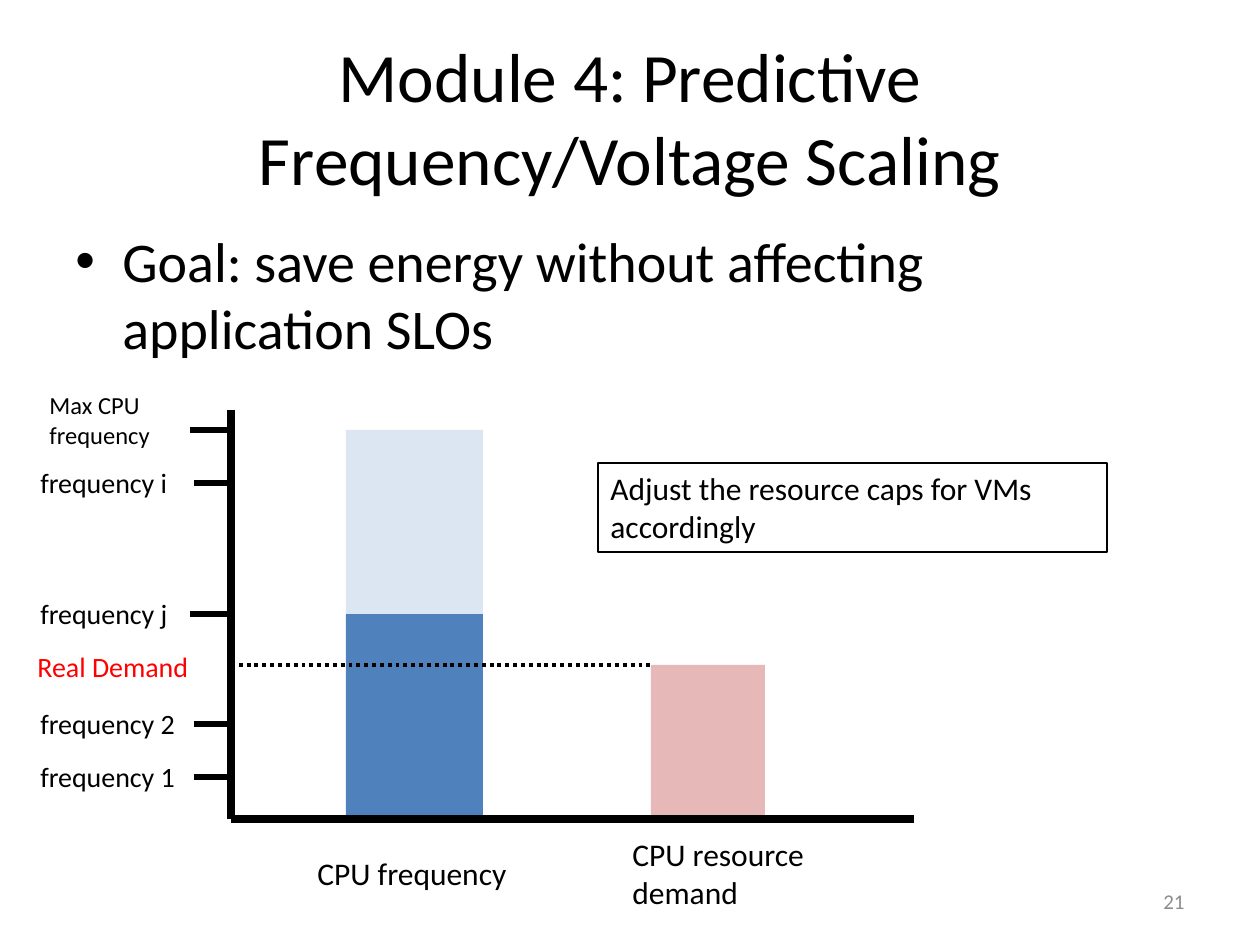
import pptx
import pptx.dml.color
import pptx.enum.dml
import pptx.enum.shapes
import pptx.enum.text
import pptx.oxml.ns
import pptx.util
from lxml import etree

PX = pptx.util.Inches(1) / 126
ALIGN = pptx.enum.text.PP_ALIGN
ANCHOR = pptx.enum.text.MSO_ANCHOR
BLACK = "000000"
PALE_BLUE = "DCE6F2"


def emu(px):
    return round(px * PX)


def color(hex_string):
    return pptx.dml.color.RGBColor.from_string(hex_string)


class SlideBuilder:
    font = "Calibri"

    def __init__(self, slide):
        self.slide = slide

    def text(self, text, left, top, width, height, size, ink=BLACK,
             align=ALIGN.LEFT, anchor=ANCHOR.TOP, border=None, bullet_indent=None):
        shape = self.slide.shapes.add_textbox(*map(emu, (left, top, width, height)))
        if border:
            shape.line.color.rgb = color(border)
            shape.line.width = pptx.util.Pt(0.75)
        frame = shape.text_frame
        frame.word_wrap = True
        frame.vertical_anchor = anchor
        frame.text = text
        paragraph = frame.paragraphs[0]
        paragraph.alignment = align
        if bullet_indent:
            properties = paragraph._p.get_or_add_pPr()
            properties.set("marL", str(emu(bullet_indent)))
            properties.set("indent", str(-emu(bullet_indent)))
            typeface = etree.SubElement(properties, pptx.oxml.ns.qn("a:buFont"))
            typeface.set("typeface", "Arial")
            bullet = etree.SubElement(properties, pptx.oxml.ns.qn("a:buChar"))
            bullet.set("char", "•")
        for run in paragraph.runs:
            run.font.name = self.font
            run.font.size = pptx.util.Pt(size)
            run.font.color.rgb = color(ink)

    def bar(self, left, top, width, bottom, fill):
        shape = self.slide.shapes.add_shape(
            pptx.enum.shapes.MSO_SHAPE.RECTANGLE,
            *map(emu, (left, top, width, bottom - top)))
        shape.shadow.inherit = False
        shape.fill.solid()
        shape.fill.fore_color.rgb = color(fill)
        shape.line.fill.background()

    def line(self, x1, y1, x2, y2, weight, dash=None):
        connector = self.slide.shapes.add_connector(
            pptx.enum.shapes.MSO_CONNECTOR.STRAIGHT, *map(emu, (x1, y1, x2, y2)))
        connector.line.color.rgb = color(BLACK)
        connector.line.width = pptx.util.Pt(weight)
        if dash:
            connector.line.dash_style = dash
        etree.SubElement(connector._element.spPr, pptx.oxml.ns.qn("a:effectLst"))


def main():
    presentation = pptx.Presentation()
    presentation.slide_width = emu(1260)
    presentation.slide_height = emu(945)
    builder = SlideBuilder(presentation.slides.add_slide(presentation.slide_layouts[6]))

    builder.text("Module 4: Predictive Frequency/Voltage Scaling", 63, 38, 1134, 157,
                 39.6, align=ALIGN.CENTER, anchor=ANCHOR.MIDDLE)
    builder.text("Goal: save energy without affecting application SLOs",
                 63, 220, 1134, 147, 32, bullet_indent=47)

    axis_x, axis_y = 231, 819
    max_y, frequency_j_y, demand_y = 430, 614, 665
    bar_left, bar_width, demand_left = 346, 137, 651

    builder.bar(bar_left, frequency_j_y, bar_width, axis_y, "4F81BD")
    builder.bar(bar_left, max_y, bar_width, frequency_j_y, PALE_BLUE)
    builder.bar(demand_left, demand_y, 114, axis_y, "E6B9B8")
    builder.line(axis_x, axis_y, 914, axis_y, 4.5)
    builder.line(axis_x, axis_y, axis_x, 410, 4.5)
    builder.line(axis_x, demand_y, demand_left, demand_y, 2.25,
                 pptx.enum.dml.MSO_LINE.ROUND_DOT)

    frequencies = [
        ("frequency i", 483, 194),
        ("frequency j", frequency_j_y, 190),
        ("frequency 2", 724, 194),
        ("frequency 1", 777, 194),
    ]
    tick_length = 37
    for label, y, tick_left in frequencies:
        builder.line(tick_left, y, tick_left + tick_length, y, 3)
        builder.text(label, 28, y - 24, 163, 47, 16)
    builder.line(190, max_y, 190 + tick_length, max_y, 3)
    builder.text("Max CPU frequency", 37, 384, 181, 72, 14)
    builder.text("Real Demand", 25, 643, 184, 47, 16, "FF0000")

    builder.text("CPU frequency", 305, 848, 247, 50, 18)
    builder.text("CPU resource demand", 620, 829, 247, 89, 18)
    builder.text("Adjust the resource caps for VMs accordingly",
                 598, 463, 509, 89, 18, border=BLACK)
    builder.text("21", 903, 876, 294, 50, 12, "8C8C8C",
                 align=ALIGN.RIGHT, anchor=ANCHOR.MIDDLE)

    presentation.save("out.pptx")


if __name__ == "__main__":
    main()
